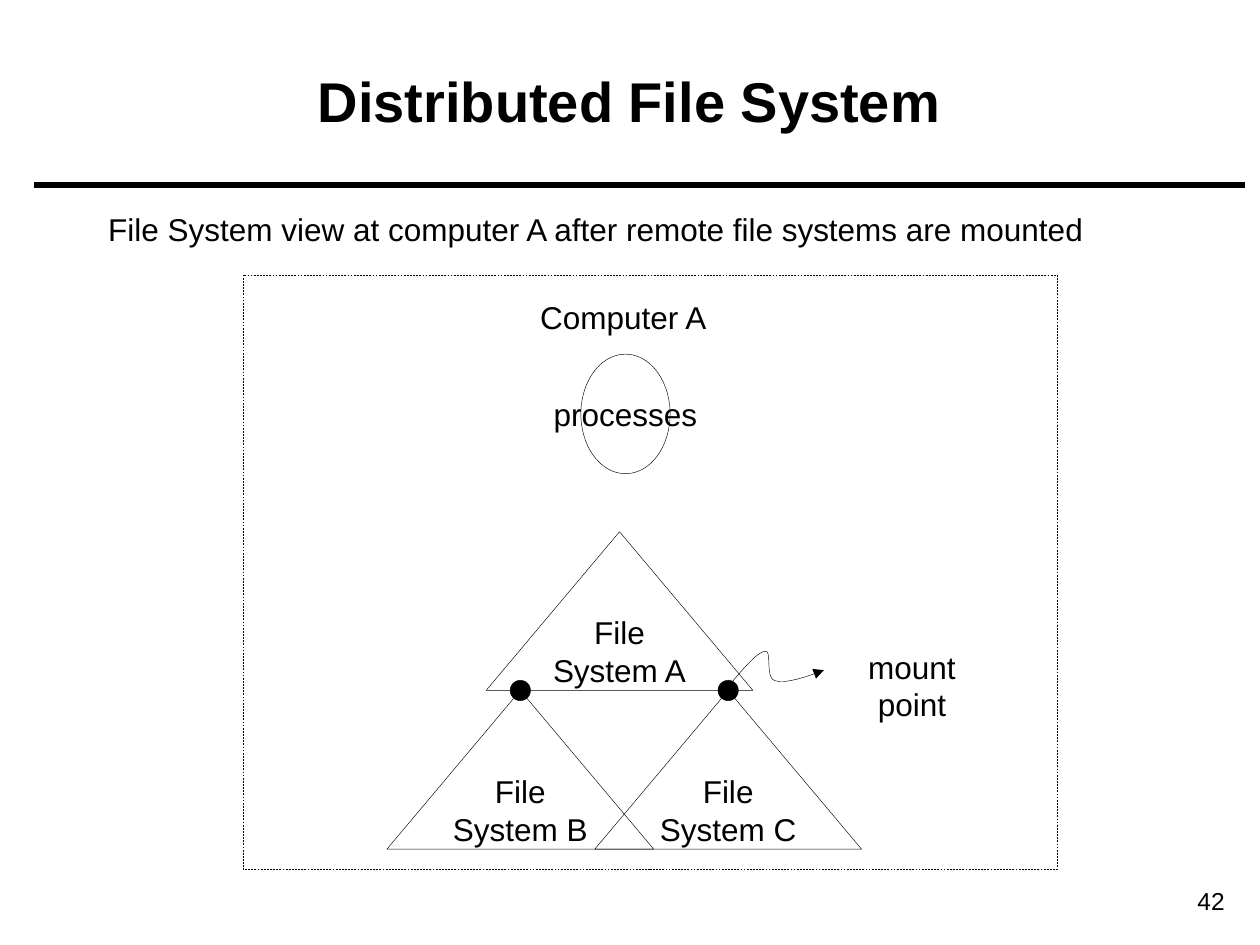
from dataclasses import dataclass

from lxml.etree import SubElement
from pptx import Presentation
from pptx.dml.color import RGBColor
from pptx.enum.dml import MSO_LINE
from pptx.enum.shapes import MSO_CONNECTOR, MSO_SHAPE as Preset
from pptx.enum.text import MSO_ANCHOR as Anchor, PP_ALIGN as Align
from pptx.oxml.ns import qn
from pptx.util import Cm, Pt

BLACK = RGBColor(0, 0, 0)
FONT = "Arial"
THIN = 0.25
TRIANGLE_WIDTH, TRIANGLE_HEIGHT = 5.38, 3.2
DOT = 0.41
CURVE_STEPS = 12


@dataclass
class Label:
    text: str
    left: float
    top: float
    width: float
    height: float = 1.02
    size: int = 18
    bold: bool = False
    align: Align = Align.CENTER
    anchor: Anchor = Anchor.TOP
    wrap: bool = False


@dataclass
class FileSystem:
    name: str
    apex_x: float
    apex_y: float
    mounted: bool


LABELS = [
    Label("42", 22.3, 17.73, 2.64, 0.86, 14, align=Align.RIGHT, wrap=True),
    Label("Distributed File System", 0.89, 0.43, 23.6, 3.18, 32, True,
          anchor=Anchor.MIDDLE, wrap=True),
    Label("Computer A", 10.62, 5.89, 3.89),
    Label("mount point", 16.48, 12.93, 3.81),
    Label("File System view at computer A after remote file systems are mounted",
          1.9, 4.11, 20.22),
]
FILE_SYSTEMS = [
    FileSystem("A", 12.49, 10.72, False),
    FileSystem("C", 14.68, 13.92, True),
    FileSystem("B", 10.49, 13.92, True),
]
POINTER_START = (14.61, 13.92)
POINTER_CURVES = [
    ((14.94, 13.54), (15.24, 13.16), (15.42, 13.13)),
    ((15.57, 13.08), (15.42, 13.67), (15.62, 13.72)),
    ((15.8, 13.79), (16.21, 13.67), (16.61, 13.51)),
]


def write(shape, text: str, size: int = 18, bold: bool = False,
          align=Align.CENTER, anchor=Anchor.MIDDLE, wrap: bool = False) -> None:
    frame = shape.text_frame
    frame.text = text
    frame.word_wrap = wrap
    frame.vertical_anchor = anchor
    for paragraph in frame.paragraphs:
        paragraph.alignment = align
        for span in paragraph.runs:
            span.font.name = FONT
            span.font.size = Pt(size)
            span.font.bold = bold
            span.font.color.rgb = BLACK


def outline(shape, filled: bool = False) -> None:
    shape.shadow.inherit = False
    if filled:
        shape.fill.solid()
        shape.fill.fore_color.rgb = BLACK
    else:
        shape.fill.background()
    shape.line.color.rgb = BLACK
    shape.line.width = Pt(THIN)


def add_outlined(page, preset, left: float, top: float, width: float,
                 height: float, filled: bool = False):
    shape = page.shapes.add_shape(preset, Cm(left), Cm(top), Cm(width), Cm(height))
    outline(shape, filled)
    return shape


def add_label(page, label: Label) -> None:
    box = page.shapes.add_textbox(Cm(label.left), Cm(label.top),
                                  Cm(label.width), Cm(label.height))
    write(box, label.text, label.size, label.bold, label.align, label.anchor, label.wrap)


def add_title_rule(page) -> None:
    rule = page.shapes.add_connector(MSO_CONNECTOR.STRAIGHT,
                                     Cm(0.69), Cm(3.73), Cm(25.1), Cm(3.73))
    rule.line.color.rgb = BLACK
    rule.line.width = Pt(3)
    SubElement(rule._element.spPr, qn("a:effectLst"))


def add_file_system(page, system: FileSystem) -> None:
    triangle = add_outlined(page, Preset.ISOSCELES_TRIANGLE,
                            system.apex_x - TRIANGLE_WIDTH / 2, system.apex_y,
                            TRIANGLE_WIDTH, TRIANGLE_HEIGHT)
    write(triangle, f"File\nSystem {system.name}")


def add_mount_point(page, system: FileSystem) -> None:
    add_outlined(page, Preset.OVAL, system.apex_x - DOT / 2,
                 system.apex_y - DOT / 2, DOT, DOT, filled=True)


def bezier(points, t: float):
    weights = ((1 - t) ** 3, 3 * t * (1 - t) ** 2, 3 * t ** 2 * (1 - t), t ** 3)
    return tuple(Cm(sum(weight * point[axis] for weight, point in zip(weights, points)))
                 for axis in (0, 1))


def add_pointer(page) -> None:
    start = POINTER_START
    vertices = []
    for curve in POINTER_CURVES:
        vertices += [bezier((start, *curve), step / CURVE_STEPS)
                     for step in range(1, CURVE_STEPS + 1)]
        start = curve[-1]
    builder = page.shapes.build_freeform(*(Cm(value) for value in POINTER_START))
    builder.add_line_segments(vertices, close=False)
    pointer = builder.convert_to_shape()
    outline(pointer)
    SubElement(pointer.line._get_or_add_ln(), qn("a:tailEnd"), type="triangle")


def main() -> None:
    deck = Presentation()
    deck.slide_width, deck.slide_height = Cm(25.4), Cm(19.05)
    page = deck.slides.add_slide(deck.slide_layouts[6])
    add_title_rule(page)
    for label in LABELS:
        add_label(page, label)
    for system in FILE_SYSTEMS:
        add_file_system(page, system)
    write(add_outlined(page, Preset.OVAL, 11.71, 7.14, 1.8, 2.41), "processes")
    for system in FILE_SYSTEMS:
        if system.mounted:
            add_mount_point(page, system)
    add_pointer(page)
    computer = add_outlined(page, Preset.RECTANGLE, 4.9, 5.54, 16.41, 11.99)
    computer.line.dash_style = MSO_LINE.DASH
    deck.save("out.pptx")


if __name__ == "__main__":
    main()
